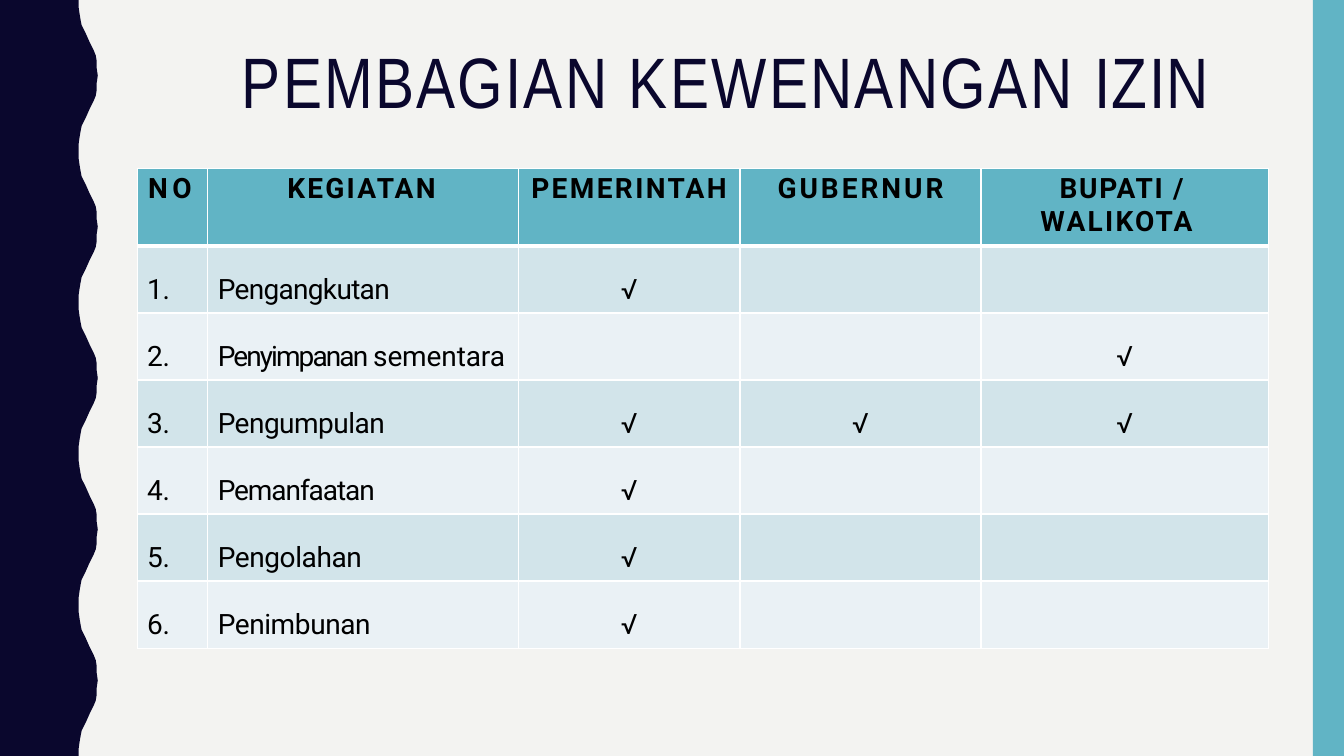
from pptx import Presentation
from pptx.dml.color import RGBColor
from pptx.enum.shapes import MSO_SHAPE
from pptx.enum.text import MSO_ANCHOR, MSO_AUTO_SIZE, PP_ALIGN
from pptx.oxml import parse_xml
from pptx.oxml.ns import nsdecls
from pptx.util import Inches, Pt

COLORS = {
    "paper": "F3F3F1", "navy": "0A072D", "teal": "61B4C5", "black": "000000",
    "white": "FFFFFF", "odd": "D2E4EA", "even": "EAF1F5",
}
WIDTH, HEIGHT = 13.33, 7.5
WAVE_PERIOD = 1.5
HALF_WAVE = [
    (0.78, 0), (0.78, 0.07), (0.79, 0.14), (0.8, 0.2), (0.81, 0.25),
    (0.83, 0.29), (0.85, 0.33), (0.89, 0.42), (0.91, 0.46), (0.93, 0.5),
    (0.95, 0.55), (0.96, 0.61), (0.96, 0.68), (0.97, 0.75),
]

TITLE = [("PEMBAGIAN ", 1.6), ("KEWENANGAN ", 1.7), ("IZIN", 1.1)]
TITLE_FONT = {"name": "Arial Narrow", "size": Pt(51), "bold": False}
HEADER_FONT = {"name": "Roboto", "size": Pt(20), "bold": True}
BODY_FONT = {"name": "Roboto", "size": Pt(20), "bold": False}

COLUMN_WIDTHS = [0.7, 3.08, 2.2, 2.39, 2.85]
HEADER_HEIGHT, ROW_HEIGHT = 0.77, 0.665
# Each header: runs with letter spacing, then left and first-line indents (None centres)
HEADERS = [
    ([("NO", 3.1)], (0.11, 0)),
    ([("KEGIATAN", 1.6)], (0.79, 0)),
    ([("PEMERINTAH", 1.7)], None),
    ([("GUBERNUR", 2.1)], None),
    ([("BUPATI ", 1.2), ("/ ", -0.5), ("WALIKOTA", 1.6)], (0.59, 0.19)),
]
# Each activity: runs with letter spacing, then the columns that are ticked
ACTIVITIES = [
    ([("Pengangkutan", -0.5)], [2]),
    ([("Penyimpanan ", -1.4), ("sementara", -0.1)], [4]),
    ([("Pengumpulan", -0.4)], [2, 3, 4]),
    ([("Pemanfaatan", -0.8)], [2]),
    ([("Pengolahan", -0.3)], [2]),
    ([("Penimbunan", -0.3)], [2]),
]


def rgb(name):
    return RGBColor.from_string(COLORS[name])


def set_all(target, values):
    for name, value in values.items():
        setattr(target, name, value)


def paint(shape, color):
    shape.shadow.inherit = False
    shape.fill.solid()
    shape.fill.fore_color.rgb = rgb(color)
    shape.line.fill.background()


def write_runs(para, runs, font, color, indent=None):
    """Write (text, letter spacing) runs; without an indent the line is centred."""
    para.alignment = PP_ALIGN.LEFT if indent else PP_ALIGN.CENTER
    if indent:
        left, first = indent
        properties = para._p.get_or_add_pPr()
        properties.set("marL", str(Inches(left)))
        properties.set("indent", str(Inches(first)))
    for text, spacing in runs:
        span = para.add_run()
        span.text = text
        set_all(span.font, font)
        span.font.color.rgb = rgb(color)
        span._r.get_or_add_rPr().set("spc", str(round(spacing * 100)))


def add_wave(page):
    points = [(0, 0), (0, HEIGHT)]
    edge = []
    for period in range(round(HEIGHT / WAVE_PERIOD)):
        top = period * WAVE_PERIOD
        edge += [(x, top + y) for x, y in HALF_WAVE]
        edge += [(x, top + WAVE_PERIOD - y) for x, y in HALF_WAVE[-2::-1]]
    points += edge[::-1]
    (start_x, start_y), *others = [(Inches(x), Inches(y)) for x, y in points]
    builder = page.shapes.build_freeform(start_x, start_y)
    builder.add_line_segments(others, close=True)
    paint(builder.convert_to_shape(), "navy")


def add_side_band(page):
    left = 13.02
    band = page.shapes.add_shape(
        MSO_SHAPE.RECTANGLE, Inches(left), 0, Inches(WIDTH - left), Inches(HEIGHT))
    paint(band, "teal")


def fill_title(page):
    title = page.shapes.title
    set_all(title, {"left": Inches(1.46), "top": Inches(0.36),
                    "width": Inches(10.96), "height": Inches(0.88)})
    frame = title.text_frame
    set_all(frame, {"margin_left": 0, "margin_top": Inches(0.01), "margin_right": 0,
                    "margin_bottom": 0, "word_wrap": True,
                    "vertical_anchor": MSO_ANCHOR.TOP,
                    "auto_size": MSO_AUTO_SIZE.SHAPE_TO_FIT_TEXT})
    write_runs(frame.paragraphs[0], TITLE, TITLE_FONT, "navy", (0.94, 0))


def format_cell(cell, color, margin_top, top_line, bottom_line):
    set_all(cell, {"margin_left": 0, "margin_right": 0, "margin_bottom": 0,
                   "margin_top": Inches(margin_top), "vertical_anchor": MSO_ANCHOR.TOP})
    properties = cell._tc.get_or_add_tcPr()
    for side, points in zip("LRTB", (1, 1, top_line, bottom_line)):
        properties.append(parse_xml(
            f'<a:ln{side} {nsdecls("a")} w="{Pt(points)}"><a:solidFill>'
            f'<a:srgbClr val="{COLORS["white"]}"/></a:solidFill></a:ln{side}>'))
    cell.fill.solid()
    cell.fill.fore_color.rgb = rgb(color)


def add_permit_table(page):
    row_count = len(ACTIVITIES) + 1
    table = page.shapes.add_table(
        row_count, len(HEADERS), Inches(1.36), Inches(1.67), Inches(sum(COLUMN_WIDTHS)),
        Inches(HEADER_HEIGHT + ROW_HEIGHT * len(ACTIVITIES))).table
    for column, width in zip(table.columns, COLUMN_WIDTHS):
        column.width = Inches(width)
    for index, row in enumerate(table.rows):
        row.height = Inches(ROW_HEIGHT if index else HEADER_HEIGHT)

    for column, (runs, indent) in enumerate(HEADERS):
        cell = table.cell(0, column)
        format_cell(cell, "teal", 0.04, 1, 3)
        write_runs(cell.text_frame.paragraphs[0], runs, HEADER_FONT, "black", indent)

    for number, (activity, ticked) in enumerate(ACTIVITIES, start=1):
        contents = {0: [(f"{number}.", -0.2)], 1: activity}
        contents.update({column: [("√", -0.5)] for column in ticked})
        for column in range(len(HEADERS)):
            cell = table.cell(number, column)
            format_cell(cell, "odd" if number % 2 else "even", 0.27,
                        3 if number == 1 else 1, 1)
            if column in contents:
                write_runs(cell.text_frame.paragraphs[0], contents[column], BODY_FONT,
                           "black", (0.1, 0) if column < 2 else None)


def main():
    deck = Presentation()
    deck.slide_width, deck.slide_height = Inches(WIDTH), Inches(HEIGHT)
    page = deck.slides.add_slide(deck.slide_layouts.get_by_name("Title Only"))
    page.background.fill.solid()
    page.background.fill.fore_color.rgb = rgb("paper")
    add_wave(page)
    add_side_band(page)
    fill_title(page)
    add_permit_table(page)
    deck.save("out.pptx")


if __name__ == "__main__":
    main()
